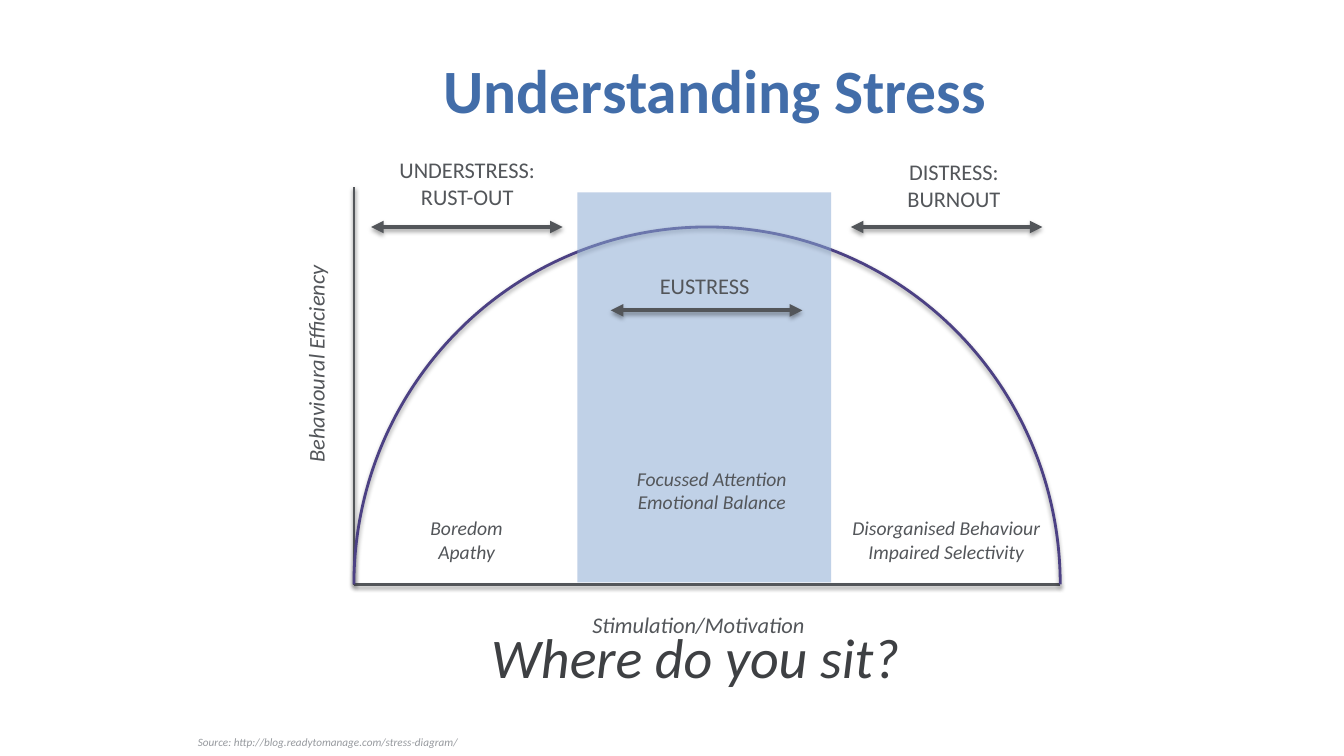
"""Build the Understanding Stress slide: a performance curve with three zones."""
from dataclasses import dataclass

from pptx import Presentation
from pptx import util as u
from pptx.dml.color import RGBColor
from pptx.enum import shapes, text
from pptx.oxml import parse_xml
from pptx.oxml.ns import nsdecls, qn
from lxml import etree


@dataclass(frozen=True)
class Theme:
    """Colours, type sizes and line widths of the slide."""
    font: str = "Calibri"
    title: str = "426DA9"
    question: str = "3E4043"
    ink: str = "53565A"
    muted: str = "96999E"
    curve: str = "4C4184"
    band: str = "88A7D1"
    title_size: int = 44
    question_size: int = 40
    label_size: int = 16
    trait_size: int = 14
    source_size: int = 8
    axis_width: int = 2
    arrow_width: int = 3


THEME = Theme()


@dataclass(frozen=True)
class Label:
    """A text box with its place in centimetres and its type style."""
    text: str
    left: float
    top: float
    width: float
    height: float
    size: int = THEME.label_size
    color: str = THEME.ink
    bold: bool = False
    italic: bool = True
    centered: bool = True
    middle: bool = False
    rotation: int = 0


@dataclass(frozen=True)
class Zone:
    """A stress zone: a double-headed arrow and the label above it."""
    arrow_left: float
    arrow_top: float
    label: Label


AXIS_LEFT, AXIS_RIGHT, AXIS_TOP, AXIS_BOTTOM = 8.92, 26.72, 4.72, 14.73
CURVE_TOP, CURVE_HEIGHT = 5.72, 18.01
ARROW_LENGTH = 4.83

HEADINGS = [
    Label("Where do you sit?", 11.43, 15.44, 12.19, 2.21,
          THEME.question_size, THEME.question, middle=True),
    Label("Understanding Stress", 6.6, 0.64, 22.86, 3.18,
          THEME.title_size, THEME.title, bold=True, italic=False, middle=True),
    Label("Stimulation/Motivation", 14.68, 15.27, 7.8, 0.94, centered=False),
    Label("Source: http://blog.readytomanage.com/stress-diagram/",
          4.42, 18.11, 7.7, 1.17, THEME.source_size, THEME.muted, middle=True),
]
SIDE_LABEL = Label("Behavioural Efficiency", 4.06, 7.54, 7.8, 0.94,
                   centered=False, rotation=270)
ZONES = [
    Zone(15.39, 7.82, Label("EUSTRESS", 16.38, 6.73, 3.12, 0.94,
                            italic=False, centered=False)),
    Zone(9.35, CURVE_TOP, Label("UNDERSTRESS:\nRUST-OUT", 9.78, 3.81, 3.99, 1.63,
                                italic=False)),
    Zone(21.44, CURVE_TOP, Label("DISTRESS:\nBURNOUT", 22.48, 3.86, 3.12, 1.63,
                                 italic=False)),
]
TRAITS = [
    Label("Focussed Attention\nEmotional Balance", 15.44, 11.63, 5, 1.45, THEME.trait_size),
    Label("Disorganised Behaviour\nImpaired Selectivity", 21.21, 12.88, 5.28, 1.45,
          THEME.trait_size),
    Label("Boredom\nApathy", 9.12, 12.88, 5.28, 1.45, THEME.trait_size),
]


def add_label(parent, label: Label) -> None:
    """Add one styled text box."""
    sp = parent.add_textbox(u.Cm(label.left), u.Cm(label.top),
                            u.Cm(label.width), u.Cm(label.height))
    sp.rotation = label.rotation
    tf = sp.text_frame
    tf.text = label.text
    tf.word_wrap = True
    if label.middle:
        tf.vertical_anchor = text.MSO_ANCHOR.MIDDLE
    else:
        tf.auto_size = text.MSO_AUTO_SIZE.SHAPE_TO_FIT_TEXT
    for p in tf.paragraphs:
        p.alignment = text.PP_ALIGN.CENTER if label.centered else text.PP_ALIGN.LEFT
        for r in p.runs:
            r.font.name = THEME.font
            r.font.size = u.Pt(label.size)
            r.font.bold = label.bold
            r.font.italic = label.italic
            r.font.color.rgb = RGBColor.from_string(label.color)


def style_stroke(sp, color: str, width: float, alpha: int, distance: float) -> None:
    """Colour a line and give it a soft shadow straight below."""
    sp.line.color.rgb = RGBColor.from_string(color)
    sp.line.width = u.Pt(width)
    sp._element.spPr.append(parse_xml(
        f'<a:effectLst {nsdecls("a")}><a:outerShdw blurRad="{u.Pt(3.1)}" '
        f'dist="{u.Pt(distance)}" dir="5400000" rotWithShape="0">'
        f'<a:srgbClr val="000000"><a:alpha val="{alpha * 1000}"/></a:srgbClr>'
        '</a:outerShdw></a:effectLst>'))


def add_line(parent, x1: float, y1: float, x2: float, y2: float):
    """Add a straight connector between two points in centimetres."""
    return parent.add_connector(shapes.MSO_CONNECTOR.STRAIGHT,
                                u.Cm(x1), u.Cm(y1), u.Cm(x2), u.Cm(y2))


def add_curve(parent) -> None:
    """Draw both axes and the half-ellipse between them as a group."""
    chart = parent.add_group_shape().shapes
    for x, y in ((AXIS_LEFT, AXIS_TOP), (AXIS_RIGHT, AXIS_BOTTOM)):
        axis = add_line(chart, x, y, AXIS_LEFT, AXIS_BOTTOM)
        style_stroke(axis, THEME.ink, THEME.axis_width, 38, 1.6)
    arc = chart.add_shape(shapes.MSO_SHAPE.ARC, u.Cm(AXIS_LEFT), u.Cm(CURVE_TOP),
                          u.Cm(AXIS_RIGHT - AXIS_LEFT), u.Cm(CURVE_HEIGHT))
    arc.adjustments[0] = 108
    arc.adjustments[1] = 0
    arc.fill.background()
    style_stroke(arc, THEME.curve, THEME.axis_width, 38, 1.6)


def add_band(parent) -> None:
    """Shade the eustress range with a translucent rectangle."""
    band = parent.add_shape(shapes.MSO_SHAPE.RECTANGLE, u.Cm(14.55), u.Cm(4.85),
                            u.Cm(6.4), u.Cm(9.83))
    band.shadow.inherit = False
    band.fill.solid()
    band.fill.fore_color.rgb = RGBColor.from_string(THEME.band)
    band.line.fill.background()
    color = band._element.spPr.find(f'{qn("a:solidFill")}/{qn("a:srgbClr")}')
    etree.SubElement(color, qn("a:alpha"), val="52000")


def add_zone(parent, zone: Zone) -> None:
    """Group a double-headed arrow with its zone label."""
    group = parent.add_group_shape().shapes
    arrow = add_line(group, zone.arrow_left, zone.arrow_top,
                     zone.arrow_left + ARROW_LENGTH, zone.arrow_top)
    style_stroke(arrow, THEME.ink, THEME.arrow_width, 35, 1.8)
    ln = arrow.line._get_or_add_ln()
    for end in ("a:headEnd", "a:tailEnd"):
        etree.SubElement(ln, qn(end), type="triangle")
    add_label(group, zone.label)


def main() -> None:
    """Assemble and save the slide."""
    prs = Presentation()
    prs.slide_width, prs.slide_height = u.Cm(33.87), u.Cm(19.05)
    s = prs.slides.add_slide(prs.slide_layouts[6])
    for heading in HEADINGS:
        add_label(s.shapes, heading)
    add_curve(s.shapes)
    add_band(s.shapes)
    add_label(s.shapes, SIDE_LABEL)
    for zone in ZONES:
        add_zone(s.shapes, zone)
    for trait in TRAITS:
        add_label(s.shapes, trait)
    prs.save("out.pptx")


if __name__ == "__main__":
    main()
